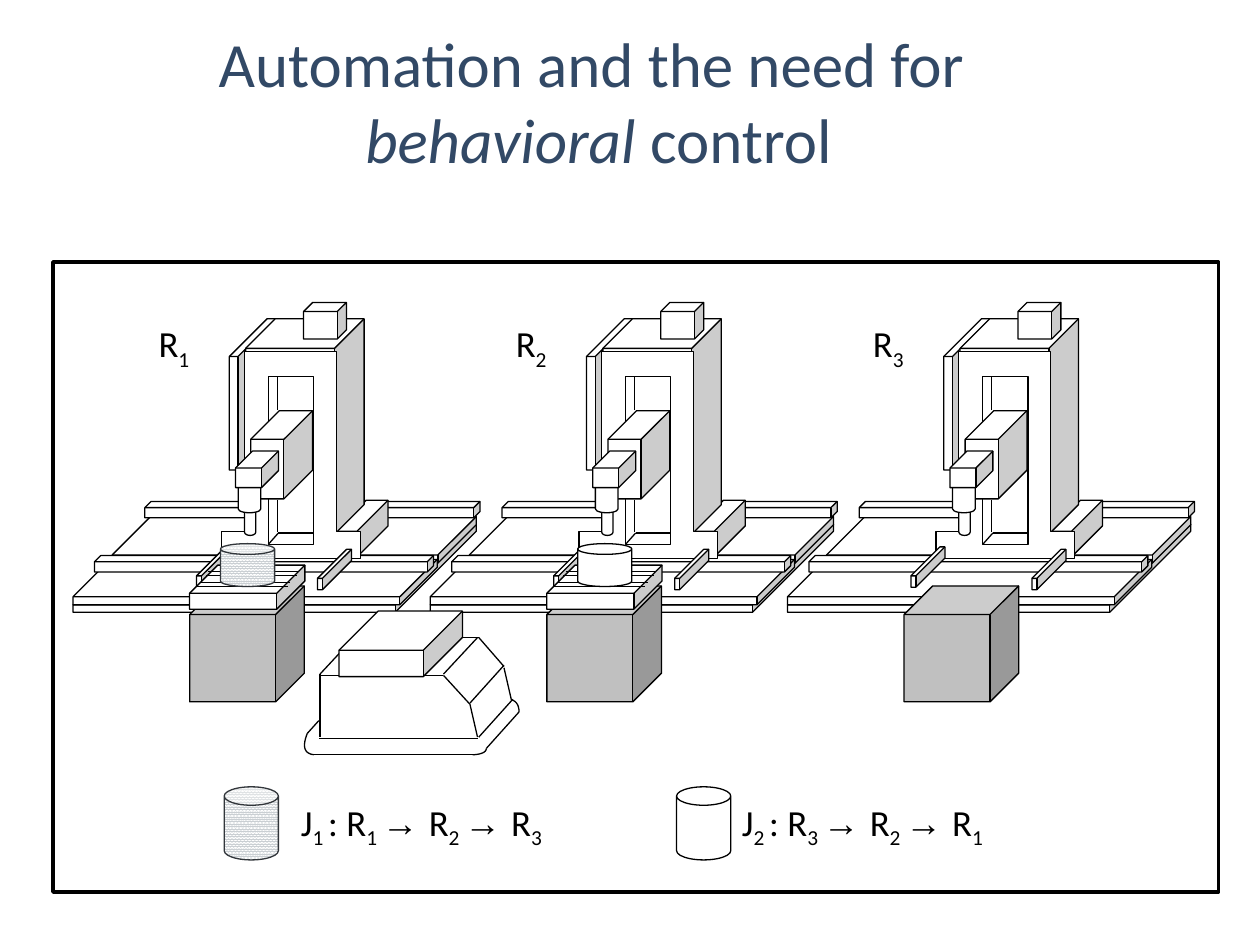
from dataclasses import dataclass

from lxml import etree
from pptx import Presentation
from pptx.dml.color import RGBColor
from pptx.enum.dml import MSO_PATTERN as Pattern
from pptx.enum.shapes import MSO_CONNECTOR as Connector, MSO_SHAPE as Shape
from pptx.enum.text import MSO_ANCHOR as Anchor, PP_ALIGN as Align
from pptx.oxml.ns import qn
from pptx.util import Emu, Inches, Pt

COLORS = {"title": "324966", "ink": "000000", "paper": "FFFFFF", "stand": "C0C0C0",
          "job": "CACFD3", "job_line": "32363B"}
COLUMNS = 1000  # the slide is a grid of 1000 columns by 750 rows
UNIT = Inches(10) / COLUMNS
PITCH = 283.5  # columns from one robot station to the next


@dataclass
class Box:
    """Area of the slide; parts are placed from its left top corner."""
    left: float
    top: float
    width: float
    height: float

    def inner(self, left, top, width, height):
        return Box(self.left + left, self.top + top, width, height)

    def point(self, column, row):
        return grid(self.left + column), grid(self.top + row)

    def emu(self):
        return [grid(n) for n in (self.left, self.top, self.width, self.height)]


def grid(count):
    return Emu(round(count * UNIT))


def color(name):
    return RGBColor.from_string(COLORS[name])


def style(shape, fill="paper", line="ink", weight=0.75):
    shape.shadow.inherit = False
    if fill is None:
        shape.fill.background()
    elif fill == "job":
        shape.fill.patterned()
        shape.fill.pattern = Pattern.PERCENT_90
        shape.fill.fore_color.rgb = color("job")
        shape.fill.back_color.rgb = color("paper")
    else:
        shape.fill.solid()
        shape.fill.fore_color.rgb = color(fill)
    shape.line.color.rgb = color(line)
    shape.line.width = Pt(weight)


def add_solid(slide, kind, box, depth=None, **look):
    shape = slide.shapes.add_shape(kind, *box.emu())
    if depth is not None:
        shape.adjustments[0] = depth
    style(shape, **look)


def add_cubes(slide, box, cubes, **look):
    for *place, depth in cubes:
        add_solid(slide, Shape.CUBE, box.inner(*place), depth, **look)


def add_lines(slide, box, lines):
    for x1, y1, x2, y2 in lines:
        line = slide.shapes.add_connector(
            Connector.STRAIGHT, *box.point(x1, y1), *box.point(x2, y2))
        line.line.color.rgb = color("ink")
        line.line.width = Pt(0.75)
        etree.SubElement(line._element.spPr, qn("a:effectLst"))


def add_outline(slide, box, points, close=True, **look):
    start, *rest = [box.point(*point) for point in points]
    builder = slide.shapes.build_freeform(*start, scale=1.0)
    builder.add_line_segments(rest, close=close)
    style(builder.convert_to_shape(), **look)


def curve(controls, steps=12):
    """Points along a cubic curve with four control points."""
    for step in range(steps + 1):
        t = step / steps
        weights = ((1 - t) ** 3, 3 * t * (1 - t) ** 2, 3 * t * t * (1 - t), t ** 3)
        yield tuple(sum(w * c[axis] for w, c in zip(weights, controls)) for axis in (0, 1))


def add_text_box(slide, box):
    frame = slide.shapes.add_textbox(*box.emu()).text_frame
    frame.word_wrap = True
    return frame


def add_run(paragraph, text, size=21, font="Calibri", ink="ink", italic=None, sub=False):
    run = paragraph.add_run()
    run.text = text
    run.font.name, run.font.size, run.font.italic = font, Pt(size), italic
    run.font.color.rgb = color(ink)
    if sub:
        run._r.get_or_add_rPr().set("baseline", "-25000")


def add_title(slide, box):
    frame = add_text_box(slide, box)
    frame.vertical_anchor = Anchor.MIDDLE
    paragraph = frame.paragraphs[0]
    paragraph.alignment = Align.CENTER
    look = {"size": 36, "ink": "title"}
    add_run(paragraph, "Automation and the need for ", **look)
    paragraph.add_line_break()
    add_run(paragraph, "behavioral", italic=True, **look)
    add_run(paragraph, " control", **look)


def add_station(slide, box, number):
    # Conveyor, rails and column
    add_cubes(slide, box, [
        (0, 176, 320, 70, 0.918), (31, 170, 289, 37, 0.824), (0, 204, 289, 36, 0.824),
        (17, 201, 269, 13, 0.381), (57, 158, 266, 13, 0.381), (208, 157, 42, 45, 0.586),
        (124, 13, 37, 120, 0.812), (137, 13, 94, 171, 0.25)])
    # Front of the column with its window
    add_outline(slide, box, [(118, 182), (136, 182), (136, 39), (209, 39),
                             (209, 182), (228, 182), (228, 203), (118, 203)])
    add_solid(slide, Shape.RECTANGLE, box.inner(155, 59, 36, 133))
    # Arm, gripper and motor
    add_cubes(slide, box, [(141, 86, 49, 70, 0.464)])
    add_solid(slide, Shape.CAN, box.inner(136, 161, 9, 24), 0.59)
    add_solid(slide, Shape.CAN, box.inner(131, 140, 18, 27), 0.339)
    add_cubes(slide, box, [(194, 196, 27, 32, 0.854), (129, 118, 34, 29, 0.464),
                           (183, 0, 34, 29, 0.25)])
    # Inner edges of the window
    add_lines(slide, box, [(162, 59, 162, 85), (155, 192, 163, 183),
                           (162, 157, 162, 182), (163, 183, 191, 183)])
    # Stop and stand
    add_cubes(slide, box, [(98, 194, 27, 32, 0.854)])
    add_cubes(slide, box, [(92.5, 225, 91, 92, 0.25)], fill="stand")
    # Label
    paragraph = add_text_box(slide, box.inner(58, 10, 52, 45)).paragraphs[0]
    add_run(paragraph, "R")
    add_run(paragraph, str(number), sub=True)


def add_cart(slide, box):
    # Body
    add_lines(slide, box, [
        (2, 97, 11, 87), (11, 51, 110, 51), (11, 101, 137, 101), (12, 50, 39, 21),
        (110, 50, 137, 21), (39, 21, 138, 21), (110, 51, 131, 74), (12, 50, 12, 100),
        (138, 21, 158, 44), (131, 73, 158, 43), (131, 74, 137, 100), (158, 45, 164, 71),
        (138, 100, 165, 70), (6, 114, 133, 114), (144, 109, 170, 80)])
    # Rounded corners of the base
    for controls in ([(170, 80), (170, 71), (164, 71), (164, 70)],
                     [(133, 114), (133, 114), (144, 114), (144, 109)],
                     [(2, 97), (-2, 107), (-1, 113), (7, 114)]):
        add_outline(slide, box, curve(controls), close=False, fill=None)
    # Load
    add_cubes(slide, box, [(27, 0, 98, 52, 0.598)])


def add_pallet(slide, box, **look):
    add_cubes(slide, box, [(0, 0, box.width, box.height, 0.64)])
    add_lines(slide, box, [(x, y, x + 72, y)
                           for x, y in ((15, 5), (13, 8), (8, 14), (6, 17))])
    add_solid(slide, Shape.CAN, box.inner(24.5, -17, 43, 34), 0.25, **look)


def add_route(slide, box, job, stops, **look):
    add_solid(slide, Shape.CAN, box.inner(0, 0, 43, 58), 0.34, **look)
    paragraph = add_text_box(slide, box.inner(box.width - 248, 5.5, 248, 45)).paragraphs[0]
    add_run(paragraph, "J")
    add_run(paragraph, f"{job} ", sub=True)
    add_run(paragraph, ": ")
    for index, stop in enumerate(stops):
        if index:
            add_run(paragraph, "→ ", font="Arial")
        add_run(paragraph, "R")
        add_run(paragraph, f"{stop} " if index < len(stops) - 1 else str(stop), sub=True)


def main():
    presentation = Presentation()
    presentation.slide_width, presentation.slide_height = Inches(10), Inches(7.5)
    slide = presentation.slides.add_slide(presentation.slide_layouts[6])
    job_look = {"fill": "job", "line": "job_line"}

    add_title(slide, Box(50, 17, 850, 125))
    add_solid(slide, Shape.RECTANGLE, Box(42, 208, 925, 500), weight=2)
    # The middle station overlaps both neighbours
    for number in (1, 3, 2):
        add_station(slide, Box(58 + (number - 1) * PITCH, 240, 323, 317), number)
    add_cart(slide, Box(242, 485, 170, 114))
    for index, look in enumerate((job_look, {})):
        add_pallet(slide, Box(150.5 + index * PITCH, 448.5, 91.5, 35), **look)
    add_route(slide, Box(178, 624.5, 299, 58), 1, (1, 2, 3), **job_look)
    add_route(slide, Box(537, 624.5, 290, 58), 2, (3, 2, 1))
    presentation.save("out.pptx")


if __name__ == "__main__":
    main()
